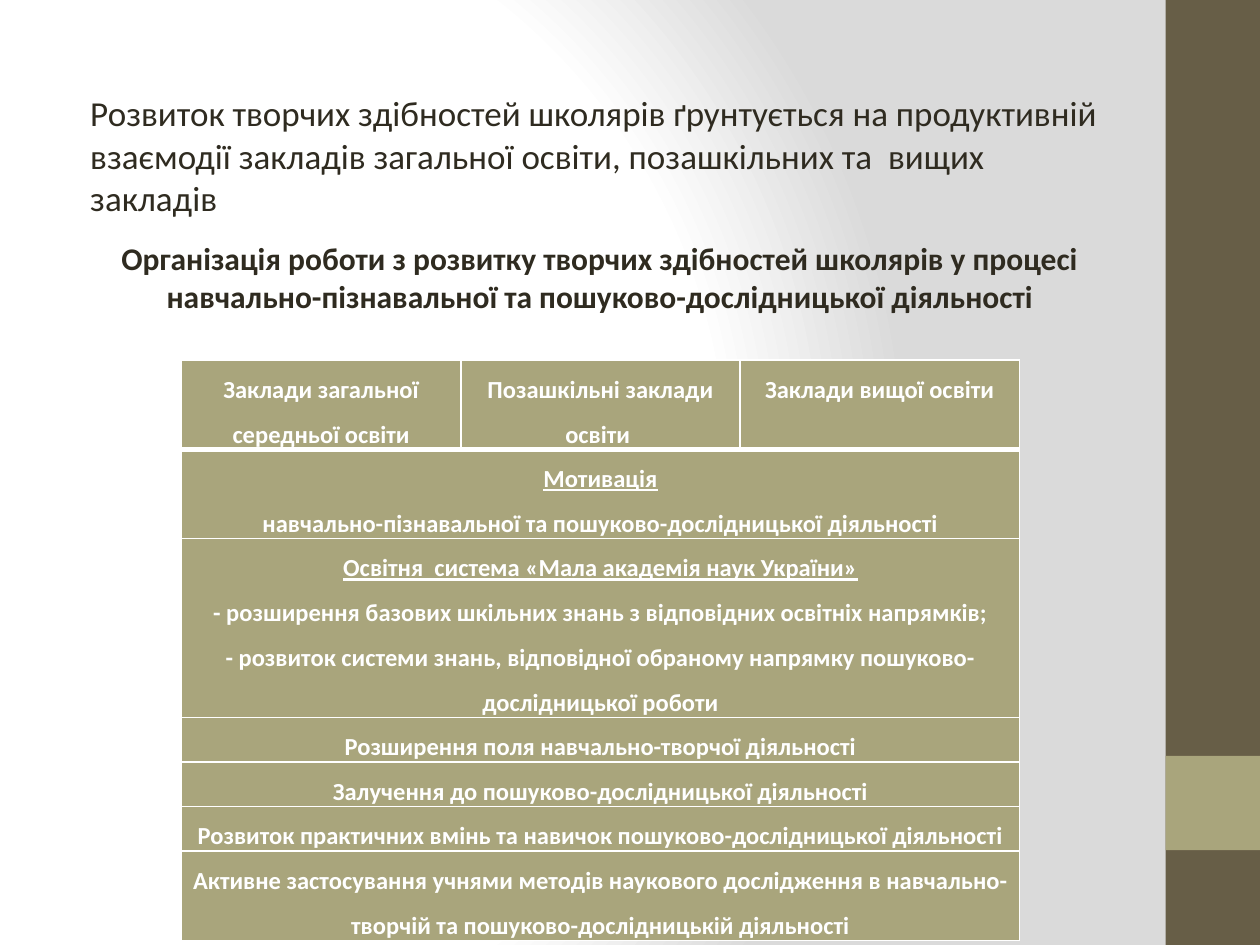
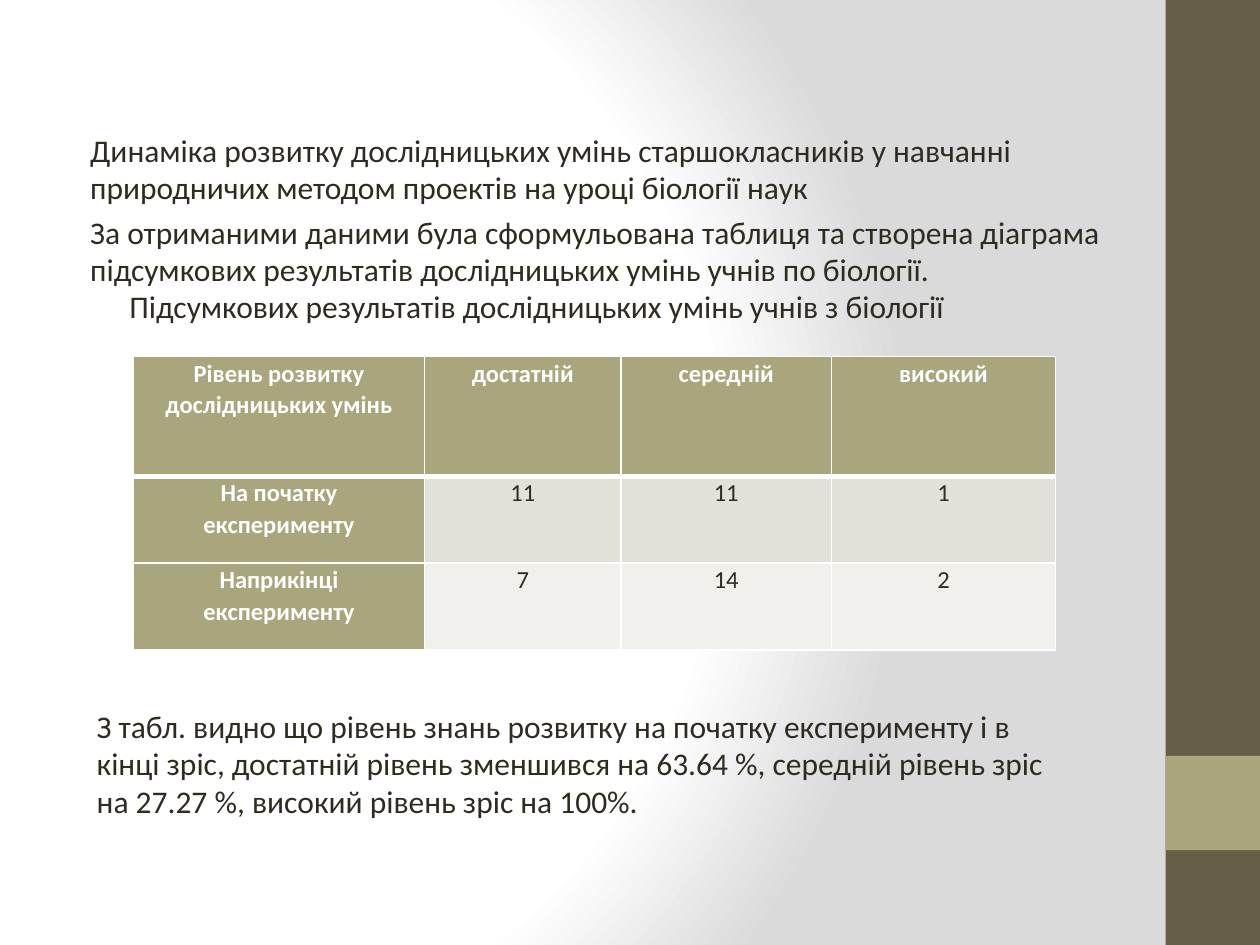
"""Builds two slides on developing pupils' creative and research skills."""
from dataclasses import dataclass

import pptx
import pptx.dml.color
import pptx.enum.shapes
import pptx.enum.text
import pptx.oxml
import pptx.oxml.ns
import pptx.slide
import pptx.table
import pptx.text.text
import pptx.util

Cm = pptx.util.Cm
Pt = pptx.util.Pt
RGBColor = pptx.dml.color.RGBColor
PP_ALIGN = pptx.enum.text.PP_ALIGN

INK = RGBColor(0x2F, 0x2B, 0x20)
WHITE = RGBColor(0xFF, 0xFF, 0xFF)
GREY = RGBColor(0xDA, 0xDA, 0xDA)
BROWN = RGBColor(0x67, 0x5E, 0x47)
OLIVE = RGBColor(0xA9, 0xA5, 0x7C)
STRIPES = (RGBColor(0xE2, 0xE1, 0xD7), RGBColor(0xF1, 0xF0, 0xEC))

FONT = "Calibri"
BACKDROP_STOPS = ((0, WHITE), (75, WHITE), (100, GREY))
NAMESPACE = pptx.oxml.ns.nsdecls("a")


@dataclass(frozen=True)
class Band:
    """A block of the right-hand side strip."""
    top: float
    height: float
    colour: RGBColor


@dataclass(frozen=True)
class Passage:
    """A text box, with its place in centimetres."""
    text: str
    left: float
    top: float
    width: float
    height: float
    size: float = 18
    bold: bool = False
    align: PP_ALIGN = PP_ALIGN.LEFT
    margin: float = 0
    first_indent: float = 0
    space_before: float = 0
    wrap: bool = True


@dataclass(frozen=True)
class Grid:
    """A table, with its place and tracks in centimetres."""
    rows: tuple[tuple[str, ...], ...]
    left: float
    top: float
    columns: tuple[float, ...]
    heights: tuple[float, ...]
    line_spacing: float


SIDE_BANDS = (Band(0, 19.05, BROWN), Band(15.24, 1.9, OLIVE))

INTERACTION = Passage(
    "Розвиток творчих здібностей школярів ґрунтується на продуктивній взаємодії "
    "закладів загальної освіти, позашкільних та  вищих закладів",
    1.27, 1.73, 21.16, 16.05, size=20, margin=0.3, space_before=4)
ORGANISATION = Passage(
    "Організація роботи з розвитку творчих здібностей школярів у процесі "
    "навчально-пізнавальної та пошуково-дослідницької діяльності",
    1.3, 4.7, 21.59, 2.57, bold=True, align=PP_ALIGN.CENTER)
LINE = 0.9
STAGES = Grid(
    (("Заклади загальної середньої освіти", "Позашкільні заклади освіти ",
      "Заклади вищої освіти"),
     ("Мотивація\nнавчально-пізнавальної та пошуково-дослідницької діяльності",),
     ("Освітня  система «Мала академія наук України»\n"
      "- розширення базових шкільних знань з відповідних освітніх напрямків;\n"
      "- розвиток системи знань, відповідної обраному напрямку "
      "пошуково-дослідницької роботи",),
     ("Розширення поля навчально-творчої діяльності",),
     ("Залучення до пошуково-дослідницької діяльності",),
     ("Розвиток практичних вмінь та навичок пошуково-дослідницької діяльності",),
     ("Активне застосування учнями методів наукового дослідження в "
      "навчально-творчій та пошуково-дослідницькій діяльності",)),
    3.66, 7.26, (5.63,) * 3,
    tuple(LINE * lines for lines in (2, 2, 4, 1, 1, 1, 2)), 1.5)

DYNAMICS = Passage(
    "Динаміка розвитку дослідницьких умінь старшокласників у навчанні "
    "природничих методом проектів на уроці біології наук\n"
    "За отриманими даними була сформульована таблиця та створена діаграма "
    "підсумкових результатів дослідницьких умінь учнів по біології.",
    1.27, 2.51, 21.16, 15.27, margin=0.3, space_before=3.6)
RESULTS_CAPTION = Passage(
    "Підсумкових результатів дослідницьких умінь учнів з біології",
    1.09, 5.66, 18.39, 1.8, first_indent=1.27, wrap=False)
RESULTS = Grid(
    (("Рівень розвитку дослідницьких умінь", "достатній", "середній", "високий"),
     ("На початку експерименту", "11", "11", "1"),
     ("Наприкінці експерименту", "7", "14", "2")),
    2.69, 7.19, (5.87, 3.96, 4.24, 4.52), (2.41, 1.75, 1.75), 1.07)
CONCLUSION = Passage(
    "З табл. видно що рівень знань розвитку на початку експерименту і в кінці "
    "зріс, достатній рівень зменшився на 63.64 %, середній рівень зріс на "
    "27.27 %, високий рівень зріс на 100%.",
    1.7, 14.12, 20.19, 2.57)

SLIDES = (
    (INTERACTION, STAGES, ORGANISATION),
    (DYNAMICS, RESULTS, RESULTS_CAPTION, CONCLUSION),
)


def paint_backdrop(slide: pptx.slide.Slide) -> None:
    """Give the slide its circular white-to-grey gradient."""
    slide.background.fill.gradient()
    linear = next(slide.element.iter(pptx.oxml.ns.qn("a:gradFill")))
    stops = "".join(
        f'<a:gs pos="{percent * 1000}"><a:srgbClr val="{colour}"/></a:gs>'
        for percent, colour in BACKDROP_STOPS)
    circular = pptx.oxml.parse_xml(
        f'<a:gradFill {NAMESPACE} rotWithShape="1"><a:gsLst>{stops}</a:gsLst>'
        '<a:path path="circle"><a:fillToRect l="20000" t="50000" r="100000" '
        'b="50000"/></a:path></a:gradFill>')
    linear.getparent().replace(linear, circular)


def draw_band(slide: pptx.slide.Slide, band: Band) -> None:
    """Draw one block of the side strip."""
    block = slide.shapes.add_shape(
        pptx.enum.shapes.MSO_SHAPE.RECTANGLE,
        Cm(23.5), Cm(band.top), Cm(1.9), Cm(band.height))
    block.shadow.inherit = False
    block.fill.solid()
    block.fill.fore_color.rgb = band.colour
    block.line.fill.background()


def format_runs(paragraph: pptx.text.text._Paragraph, size: float,
                colour: RGBColor, bold: bool, underline: bool = False) -> None:
    """Set the font of every run in a paragraph."""
    for run in paragraph.runs:
        run.font.name = FONT
        run.font.size = Pt(size)
        run.font.bold = bold
        run.font.underline = underline
        run.font.color.rgb = colour


def draw_passage(slide: pptx.slide.Slide, passage: Passage) -> None:
    """Draw a text box."""
    frame = slide.shapes.add_textbox(
        Cm(passage.left), Cm(passage.top),
        Cm(passage.width), Cm(passage.height)).text_frame
    frame.word_wrap = passage.wrap
    frame.text = passage.text
    for paragraph in frame.paragraphs:
        paragraph.alignment = passage.align
        paragraph.space_before = Pt(passage.space_before)
        properties = paragraph._p.get_or_add_pPr()
        properties.set("marL", str(Cm(passage.margin)))
        properties.set("indent", str(Cm(passage.first_indent)))
        format_runs(paragraph, passage.size, INK, passage.bold)


def border_cell(cell: pptx.table._Cell, top: float, bottom: float) -> None:
    """Give a cell white borders, with top and bottom widths in points."""
    properties = cell._tc.get_or_add_tcPr()
    for side, width in (("L", 1), ("R", 1), ("T", top), ("B", bottom)):
        properties.append(pptx.oxml.parse_xml(
            f'<a:ln{side} {NAMESPACE} w="{Pt(width)}"><a:solidFill>'
            f'<a:srgbClr val="{WHITE}"/></a:solidFill></a:ln{side}>'))


def fill_cell(cell: pptx.table._Cell, text: str, line_spacing: float,
              colour: RGBColor, bold: bool) -> None:
    """Write centred text in a cell, underlining the lead of a longer one."""
    cell.text_frame.text = text
    paragraphs = cell.text_frame.paragraphs
    for index, paragraph in enumerate(paragraphs):
        paragraph.alignment = PP_ALIGN.CENTER
        paragraph.line_spacing = line_spacing
        is_lead = index == 0 and len(paragraphs) > 1
        format_runs(paragraph, 14, colour, bold, is_lead)


def draw_grid(slide: pptx.slide.Slide, grid: Grid) -> None:
    """Draw a table; a row holding a single text spans all columns."""
    table = slide.shapes.add_table(
        len(grid.rows), len(grid.columns), Cm(grid.left), Cm(grid.top),
        Cm(sum(grid.columns)), Cm(sum(grid.heights))).table
    table.first_row = table.horz_banding = False
    for column, width in zip(table.columns, grid.columns):
        column.width = Cm(width)
    for r, (texts, height) in enumerate(zip(grid.rows, grid.heights)):
        table.rows[r].height = Cm(height)
        spans = len(texts) == 1
        for c in range(len(grid.columns)):
            cell = table.cell(r, c)
            heading = r == 0 or c == 0 or spans
            border_cell(cell, 3 if r == 1 else 1, 3 if r == 0 else 1)
            cell.fill.solid()
            cell.fill.fore_color.rgb = OLIVE if heading else STRIPES[(r - 1) % 2]
            cell.margin_left = cell.margin_right = Cm(0.18)
            cell.margin_top = cell.margin_bottom = 0
            if c < len(texts):
                fill_cell(cell, texts[c], grid.line_spacing,
                          WHITE if heading else INK, heading)
        if spans:
            table.cell(r, 0).merge(table.cell(r, len(grid.columns) - 1))


def main() -> None:
    """Build and save the presentation."""
    presentation = pptx.Presentation()
    presentation.slide_width = Cm(25.4)
    presentation.slide_height = Cm(19.05)
    for parts in SLIDES:
        slide = presentation.slides.add_slide(presentation.slide_layouts[6])
        paint_backdrop(slide)
        for band in SIDE_BANDS:
            draw_band(slide, band)
        for part in parts:
            if isinstance(part, Grid):
                draw_grid(slide, part)
            else:
                draw_passage(slide, part)
    presentation.save("out.pptx")


if __name__ == "__main__":
    main()
